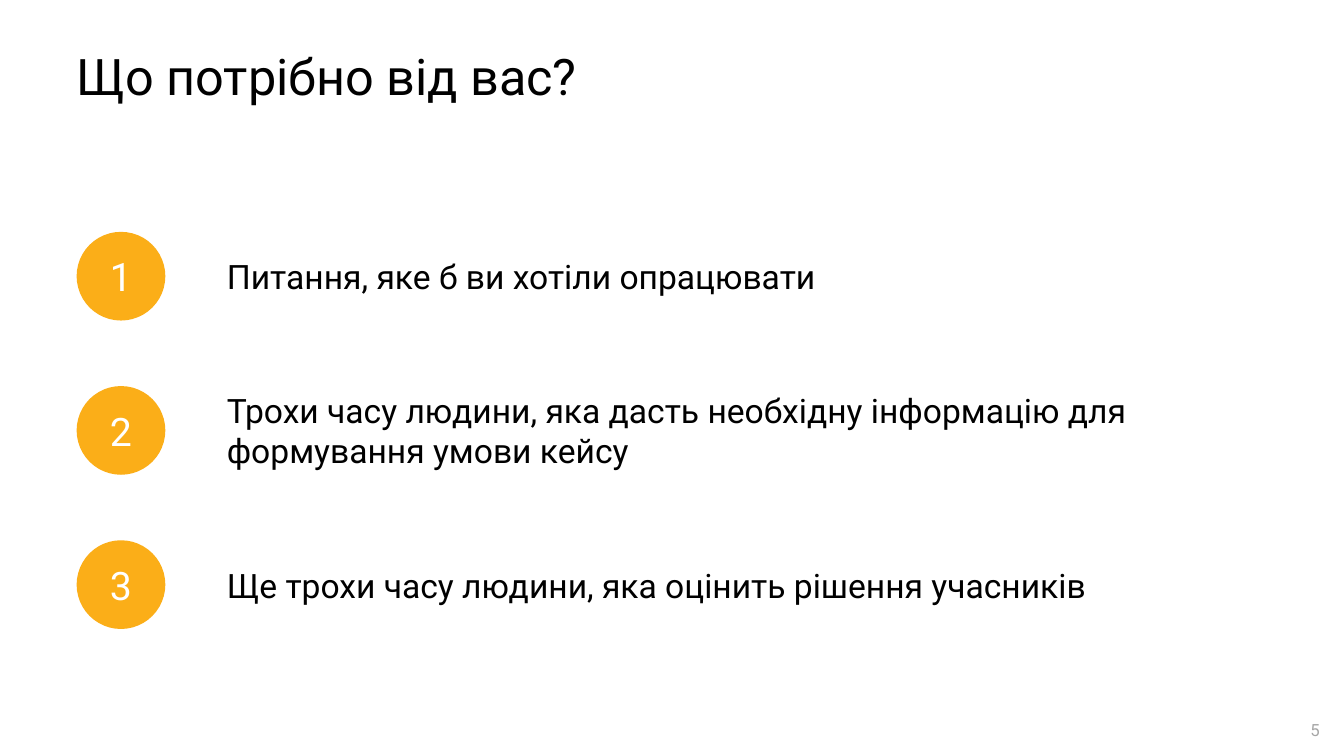
from pptx import Presentation
from pptx.dml.color import RGBColor
from pptx.enum.shapes import MSO_SHAPE
from pptx.enum.text import MSO_ANCHOR as Anchor, PP_ALIGN as Align
from pptx.util import Inches, Pt

TITLE = "Що потрібно від вас?"
NEEDS = [
    "Питання, яке б ви хотіли опрацювати",
    "Трохи часу людини, яка дасть необхідну інформацію для формування умови кейсу",
    "Ще трохи часу людини, яка оцінить рішення учасників",
]
PAGE_NUMBER = "5"

FONT = "Roboto"
COLORS = {"text": "000000", "badge": "FBAE18", "on_badge": "FFFFFF", "page": "A6A6A6"}

WIDTH, HEIGHT = 13.33, 7.5
MARGIN = 0.76
BADGE = 0.88
TEXT_LEFT = 2.25
ROW_HEIGHT, ROW_PITCH = 1.04, 1.53
FIRST_CENTER = 2.74


def box(left, top, width, height):
    return [Inches(v) for v in (left, top, width, height)]


def write(shape, text, size, color="text", align=Align.LEFT, anchor=Anchor.MIDDLE,
          spacing=None):
    tf = shape.text_frame
    tf.word_wrap = True
    tf.vertical_anchor = anchor
    tf.margin_left = tf.margin_right = tf.margin_top = tf.margin_bottom = 0
    p = tf.paragraphs[0]
    p.alignment = align
    if spacing:
        p.line_spacing = spacing
    r = p.add_run()
    r.text = text
    r.font.name = FONT
    r.font.size = Pt(size)
    r.font.color.rgb = RGBColor.from_string(COLORS[color])


def add_plain_shape(s, kind, left, center, width, height, fill=None):
    """Add a shape without line or shadow, centred vertically on center."""
    sp = s.shapes.add_shape(kind, *box(left, center - height / 2, width, height))
    sp.shadow.inherit = False
    sp.line.fill.background()
    if fill:
        sp.fill.solid()
        sp.fill.fore_color.rgb = RGBColor.from_string(COLORS[fill])
    else:
        sp.fill.background()
    return sp


def add_need(s, number, text, center):
    label = add_plain_shape(s, MSO_SHAPE.ROUNDED_RECTANGLE, TEXT_LEFT, center,
                            WIDTH - MARGIN - TEXT_LEFT, ROW_HEIGHT)
    label.adjustments[0] = 0
    write(label, text, 24)

    badge = add_plain_shape(s, MSO_SHAPE.OVAL, MARGIN, center, BADGE, BADGE, fill="badge")
    write(badge, str(number), 28, color="on_badge", align=Align.CENTER)


prs = Presentation()
prs.slide_width, prs.slide_height = Inches(WIDTH), Inches(HEIGHT)
s = prs.slides.add_slide(prs.slide_layouts.get_by_name("Title Only"))

title = s.shapes.title
title.left, title.top, title.width, title.height = box(
    MARGIN, 0.51, WIDTH - 2 * MARGIN, 0.55)
write(title, TITLE, 36, spacing=0.9)

for i, need in enumerate(NEEDS):
    add_need(s, i + 1, need, FIRST_CENTER + i * ROW_PITCH)

page = s.shapes.add_textbox(*box(12.26, 6.94, 0.83, 0.4))
write(page, PAGE_NUMBER, 12, color="page", align=Align.RIGHT, anchor=Anchor.BOTTOM)

prs.save("out.pptx")
